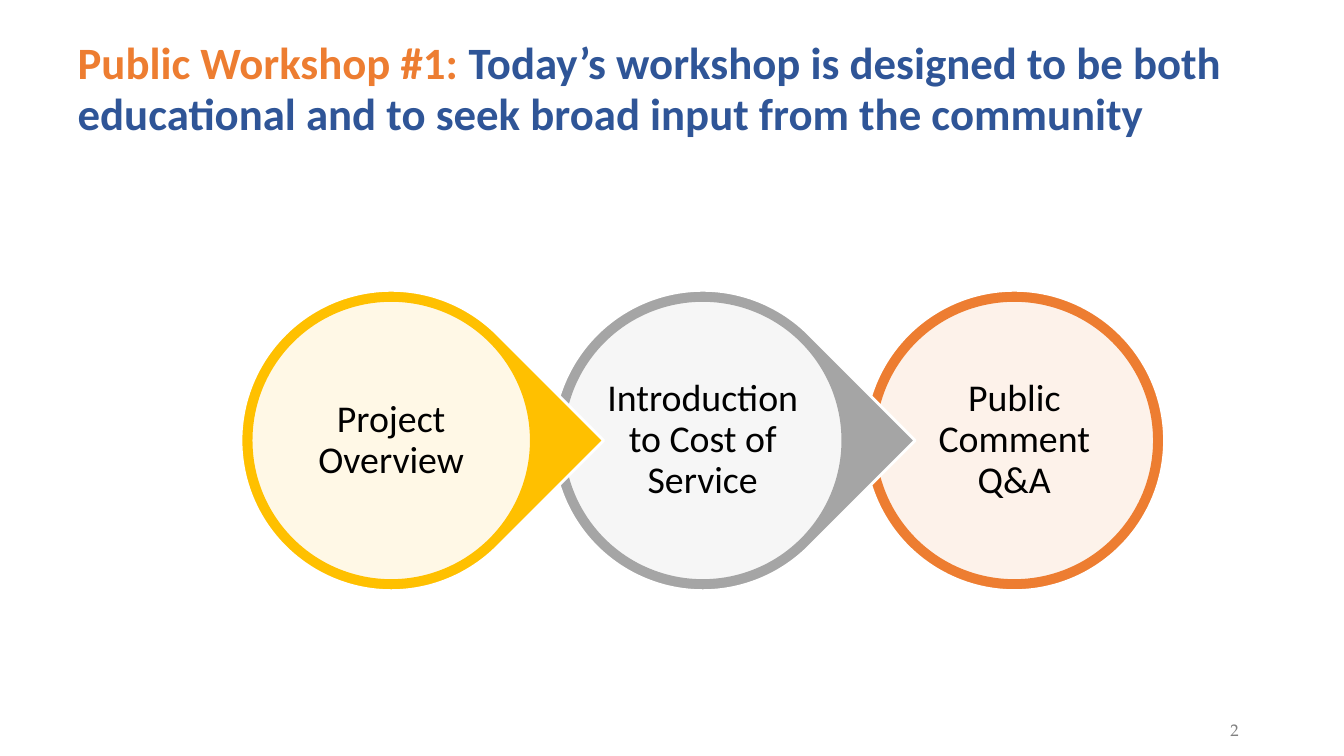
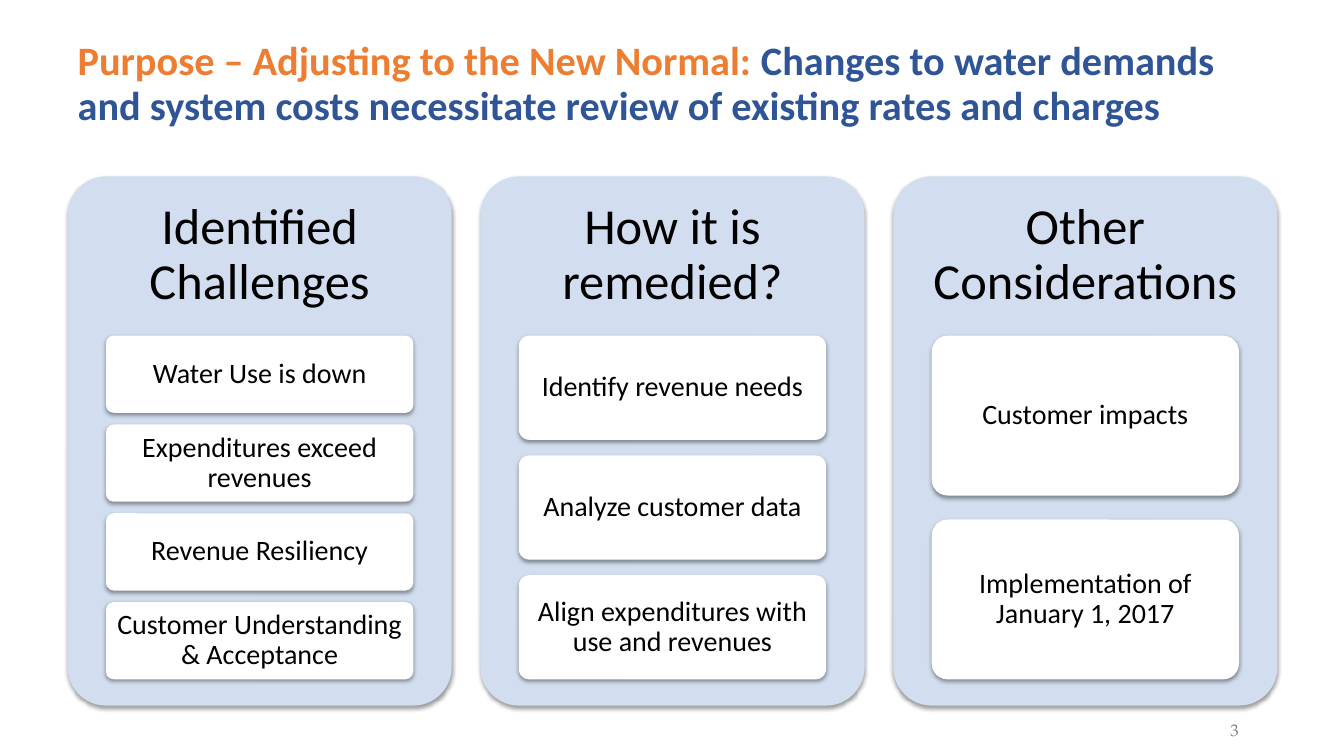
import dataclasses

import lxml.etree
import pptx
import pptx.dml.color
import pptx.enum.shapes
import pptx.enum.text
import pptx.oxml.ns
import pptx.util

Inches = pptx.util.Inches
Pt = pptx.util.Pt
RGBColor = pptx.dml.color.RGBColor
SHAPE = pptx.enum.shapes.MSO_SHAPE
ANCHOR = pptx.enum.text.MSO_ANCHOR
ALIGN = pptx.enum.text.PP_ALIGN
qn = pptx.oxml.ns.qn


@dataclasses.dataclass(frozen=True)
class Theme:
    # Colours
    orange: str = "ED7D31"
    blue: str = "2F5597"
    gold: str = "FFC000"
    gray: str = "A5A5A5"
    panel: str = "D2DEEF"
    white: str = "FFFFFF"
    black: str = "000000"
    page_number: str = "808080"
    # Fonts and sizes in points
    font: str = "Calibri"
    page_font: str = "TeX Gyre Pagella"
    title_size: float = 32
    long_title_size: float = 28.8
    page_size: float = 12
    step_size: float = 27
    heading_size: float = 36
    card_size: float = 20


THEME = Theme()

STEPS = [
    ("Project Overview", THEME.gold),
    ("Introduction to Cost of Service", THEME.gray),
    ("Public Comment Q&A", THEME.orange),
]

PANELS = [
    ("Identified Challenges", [
        "Water Use is down",
        "Expenditures exceed revenues",
        "Revenue Resiliency",
        "Customer Understanding & Acceptance",
    ]),
    ("How it is remedied?", [
        "Identify revenue needs",
        "Analyze customer data",
        "Align expenditures with use and revenues",
    ]),
    ("Other Considerations", [
        "Customer impacts",
        "Implementation of January 1, 2017",
    ]),
]


def color(value):
    return RGBColor.from_string(value)


def set_text(sp, text, size, inset_x, inset_y, font=THEME.font,
             text_color=THEME.black, spacing=0.9, anchor=ANCHOR.MIDDLE):
    """Write one centred paragraph into a shape or text box."""
    tf = sp.text_frame
    tf.word_wrap = True
    tf.vertical_anchor = anchor
    tf.margin_left = tf.margin_right = Inches(inset_x)
    tf.margin_top = tf.margin_bottom = Inches(inset_y)
    p = tf.paragraphs[0]
    p.text = text
    p.alignment = ALIGN.CENTER
    p.line_spacing = spacing
    p.font.name = font
    p.font.size = Pt(size)
    p.font.color.rgb = color(text_color)


def add_box(s, kind, left, top, width, height, fill, line=None):
    """Add a flat preset shape, outlined only when a line colour is given."""
    sp = s.shapes.add_shape(kind, Inches(left), Inches(top),
                            Inches(width), Inches(height))
    sp.shadow.inherit = False
    sp.fill.solid()
    sp.fill.fore_color.rgb = color(fill)
    if line:
        sp.line.color.rgb = color(line)
        sp.line.width = Pt(2)
    else:
        sp.line.fill.background()
    return sp


def add_alpha(fill_color, percent):
    alpha = lxml.etree.SubElement(fill_color, qn("a:alpha"))
    alpha.set("val", str(percent * 1000))


def add_raised_box(s, left, top, width, height, fill):
    """Add a rounded box with a soft shadow below it."""
    sp = add_box(s, SHAPE.ROUNDED_RECTANGLE, left, top, width, height, fill)
    sp.adjustments[0] = 0.1
    effects = sp._element.spPr.find(qn("a:effectLst"))
    shadow = lxml.etree.SubElement(effects, qn("a:outerShdw"))
    shadow.set("blurRad", str(Pt(3.1)))
    shadow.set("dist", str(Pt(1.6)))
    shadow.set("dir", str(90 * 60000))
    shadow.set("rotWithShape", "0")
    shadow_color = lxml.etree.SubElement(shadow, qn("a:srgbClr"))
    shadow_color.set("val", THEME.black)
    add_alpha(shadow_color, 38)
    return sp


def add_slide(prs, lead, message, size, number):
    """Add a slide with a two-colour title and a page number."""
    s = prs.slides.add_slide(prs.slide_layouts[5])
    title = s.shapes.title
    title.left, title.top = Inches(0.67), Inches(0.33)
    title.width, title.height = Inches(12), Inches(0.83)
    tf = title.text_frame
    tf.word_wrap = True
    tf.auto_size = pptx.enum.text.MSO_AUTO_SIZE.NONE
    tf.vertical_anchor = ANCHOR.TOP
    p = tf.paragraphs[0]
    p.alignment = ALIGN.LEFT
    p.line_spacing = 0.95
    p.font.name = THEME.font
    p.font.size = Pt(size)
    p.font.bold = True
    for text, run_color in ((lead + " ", THEME.orange), (message, THEME.blue)):
        r = p.add_run()
        r.text = text
        r.font.color.rgb = color(run_color)

    page = s.shapes.add_textbox(Inches(11.79), Inches(7.09),
                                Inches(0.91), Inches(0.3))
    set_text(page, str(number), THEME.page_size, 0.05, 0.05, THEME.page_font,
             THEME.page_number, spacing=1.0, anchor=ANCHOR.BOTTOM)
    return s


def add_step(s, left, text, ring_color, is_last):
    """Add a ring, pointing right unless last, around a tinted disc."""
    top, size, border = 2.88, 2.98, 0.1
    kind = SHAPE.OVAL if is_last else SHAPE.TEAR
    ring = add_box(s, kind, left, top, size, size, ring_color, THEME.white)
    if not is_last:
        ring.adjustments[0] = 1
        ring.rotation = 45
    inner = size - 2 * border
    disc = add_box(s, SHAPE.OVAL, left + border, top + border, inner, inner,
                   THEME.white, ring_color)
    add_alpha(disc._element.spPr.find(qn("a:solidFill"))[0], 90)
    # Narrow side insets keep the longest word on one line
    set_text(disc, text, THEME.step_size, 0.01, 0.04)


def add_panel(s, left, width, heading, cards):
    """Add a panel whose cards share the space below its heading."""
    top, heading_height = 1.75, 1.57
    add_raised_box(s, left, top, width, 5.25, THEME.panel)
    box = s.shapes.add_textbox(Inches(left), Inches(top),
                               Inches(width), Inches(heading_height))
    set_text(box, heading, THEME.heading_size, 0.15, 0.15)

    cards_top, cards_height, gap_ratio = 3.33, 3.41, 0.15
    height = cards_height / (len(cards) + (len(cards) - 1) * gap_ratio)
    card_width = width * 0.8
    for i, text in enumerate(cards):
        card = add_raised_box(s, left + width * 0.1,
                              cards_top + i * height * (1 + gap_ratio),
                              card_width, height, THEME.white)
        set_text(card, text, THEME.card_size, 0.06, 0.04)


def main():
    prs = pptx.Presentation()
    prs.slide_width, prs.slide_height = Inches(13.33), Inches(7.5)

    # Workshop steps, drawn from the right so each point overlaps the next ring
    s = add_slide(prs, "Public Workshop #1:",
                  "Today’s workshop is designed to be both educational "
                  "and to seek broad input from the community",
                  THEME.title_size, 2)
    for i, (text, ring_color) in reversed(list(enumerate(STEPS))):
        add_step(s, 2.39 + i * 3.09, text, ring_color, i == len(STEPS) - 1)

    # Challenges, remedies and considerations
    s = add_slide(prs, "Purpose – Adjusting to the New Normal:",
                  "Changes to water demands and system costs necessitate "
                  "review of existing rates and charges",
                  THEME.long_title_size, 3)
    left, total_width, width = 0.67, 12, 3.81
    pitch = (total_width - width) / (len(PANELS) - 1)
    for i, (heading, cards) in enumerate(PANELS):
        add_panel(s, left + i * pitch, width, heading, cards)

    prs.save("out.pptx")


if __name__ == "__main__":
    main()
